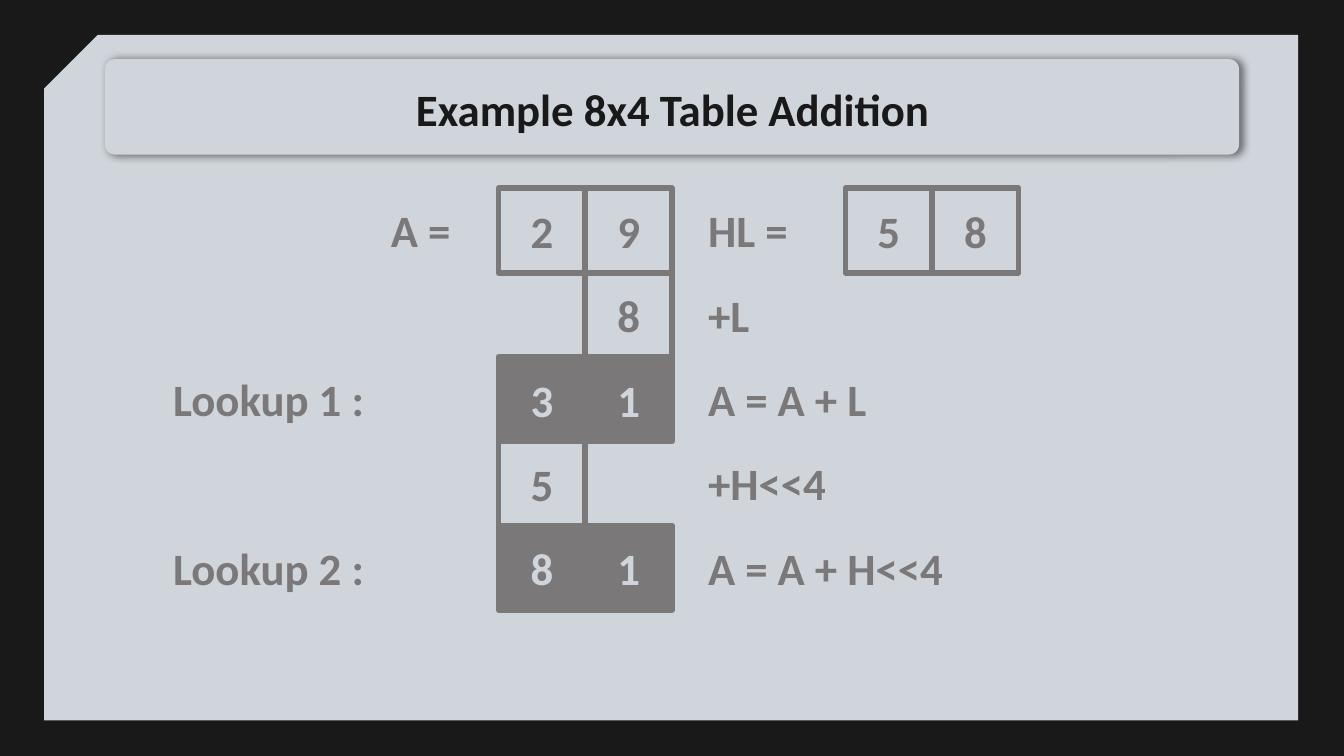
from typing import NamedTuple

import pptx
import pptx.dml.color
import pptx.enum.shapes
import pptx.enum.text
import pptx.oxml
import pptx.oxml.ns
import pptx.util
from pptx.util import Inches

BACKGROUND = "191919"
PANEL = "D0D5DB"
GREY = "7A7879"

SLIDE_WIDTH = 10
SLIDE_HEIGHT = SLIDE_WIDTH * 9 / 16

TABLE_TOP = 1.4
ROW_PITCH = (3.91 - TABLE_TOP) / 4
CELL_WIDTH = 1.29 / 2
CELL_HEIGHT = 0.63
ACCUMULATOR_LEFT = 3.71
REGISTER_LEFT = 6.29
NOTE_LEFT = 5.17
LOOKUP_LEFT = 1.19


class DigitRow(NamedTuple):
    left: float
    row: int
    digits: str  # a space leaves its column empty
    filled: bool = False


class Label(NamedTuple):
    left: float
    row: int
    width: float
    text: str


DIGIT_ROWS = [
    DigitRow(ACCUMULATOR_LEFT, 0, "29"),
    DigitRow(ACCUMULATOR_LEFT, 1, " 8"),
    DigitRow(ACCUMULATOR_LEFT, 2, "31", filled=True),
    DigitRow(ACCUMULATOR_LEFT, 3, "5 "),
    DigitRow(ACCUMULATOR_LEFT, 4, "81", filled=True),
    DigitRow(REGISTER_LEFT, 0, "58"),
]

LABELS = [
    Label(2.81, 0, 0.9, "A ="),
    Label(NOTE_LEFT, 0, 1.17, "HL ="),
    Label(NOTE_LEFT, 1, 1.64, "+L"),
    Label(NOTE_LEFT, 2, 2.1, "A = A + L"),
    Label(NOTE_LEFT, 3, 1.64, "+H<<4"),
    Label(NOTE_LEFT, 4, 3.63, "A = A + H<<4"),
    Label(LOOKUP_LEFT, 2, 2.52, "Lookup 1 :"),
    Label(LOOKUP_LEFT, 4, 2.52, "Lookup 2 :"),
]


def color(value: str) -> pptx.dml.color.RGBColor:
    return pptx.dml.color.RGBColor.from_string(value)


def row_top(row: int) -> float:
    return TABLE_TOP + row * ROW_PITCH


def write_text(shape, text: str, text_color: str, centered: bool = True) -> None:
    frame = shape.text_frame
    frame.word_wrap = True
    frame.margin_left = frame.margin_right = Inches(0.1)
    frame.margin_top = frame.margin_bottom = Inches(0.1)
    anchors = pptx.enum.text.MSO_ANCHOR
    frame.vertical_anchor = anchors.MIDDLE if centered else anchors.TOP
    paragraph = frame.paragraphs[0]
    paragraph.text = text
    alignments = pptx.enum.text.PP_ALIGN
    paragraph.alignment = alignments.CENTER if centered else alignments.LEFT
    paragraph.font.name = "Calibri"
    paragraph.font.size = pptx.util.Pt(24)
    paragraph.font.bold = True
    paragraph.font.color.rgb = color(text_color)


def add_panel(slide, kind, left: float, top: float, width: float, height: float,
              corner: float):
    shape = slide.shapes.add_shape(
        kind, Inches(left), Inches(top), Inches(width), Inches(height))
    shape.adjustments[0] = corner
    shape.shadow.inherit = False
    shape.fill.solid()
    shape.fill.fore_color.rgb = color(PANEL)
    shape.line.fill.background()
    return shape


def add_soft_shadow(shape) -> None:
    effects = shape._element.spPr.find(pptx.oxml.ns.qn("a:effectLst"))
    effects.append(pptx.oxml.parse_xml(
        f'<a:outerShdw {pptx.oxml.ns.nsdecls("a")} blurRad="57150" dist="19050" '
        'dir="360000" algn="bl" rotWithShape="0"><a:srgbClr val="000000">'
        '<a:alpha val="50000"/></a:srgbClr></a:outerShdw>'))


def add_title(slide, text: str) -> None:
    box = slide.shapes.add_textbox(
        Inches(0.79), Inches(0.49), Inches(8.43), Inches(0.63))
    write_text(box, text, BACKGROUND)


def add_digit_row(slide, digit_row: DigitRow) -> None:
    for column, digit in enumerate(digit_row.digits):
        if digit == " ":
            continue
        cell = slide.shapes.add_shape(
            pptx.enum.shapes.MSO_SHAPE.RECTANGLE,
            Inches(digit_row.left + column * CELL_WIDTH),
            Inches(row_top(digit_row.row)),
            Inches(CELL_WIDTH), Inches(CELL_HEIGHT))
        cell.shadow.inherit = False
        cell.line.color.rgb = color(GREY)
        cell.line.width = pptx.util.Pt(3)
        if digit_row.filled:
            cell.fill.solid()
            cell.fill.fore_color.rgb = color(GREY)
        else:
            cell.fill.background()
        write_text(cell, digit, PANEL if digit_row.filled else GREY)


def add_label(slide, label: Label) -> None:
    box = slide.shapes.add_textbox(
        Inches(label.left), Inches(row_top(label.row) + 0.01),
        Inches(label.width), Inches(0.61))
    write_text(box, label.text, GREY, centered=False)


def main() -> None:
    presentation = pptx.Presentation()
    presentation.slide_width = Inches(SLIDE_WIDTH)
    presentation.slide_height = Inches(SLIDE_HEIGHT)
    slide = presentation.slides.add_slide(presentation.slide_layouts[6])
    slide.background.fill.solid()
    slide.background.fill.fore_color.rgb = color(BACKGROUND)

    shapes = pptx.enum.shapes.MSO_SHAPE
    page = add_panel(
        slide, shapes.SNIP_1_RECTANGLE, 0.33, 0.26, 9.33, 5.1, 0.078)
    page._element.spPr.xfrm.set("flipH", "1")
    banner = add_panel(
        slide, shapes.ROUNDED_RECTANGLE, 0.78, 0.44, 8.44, 0.71, 0.106)
    add_soft_shadow(banner)
    add_title(slide, "Example 8x4 Table Addition")

    for digit_row in DIGIT_ROWS:
        add_digit_row(slide, digit_row)
    for label in LABELS:
        add_label(slide, label)

    presentation.save("out.pptx")


if __name__ == "__main__":
    main()
